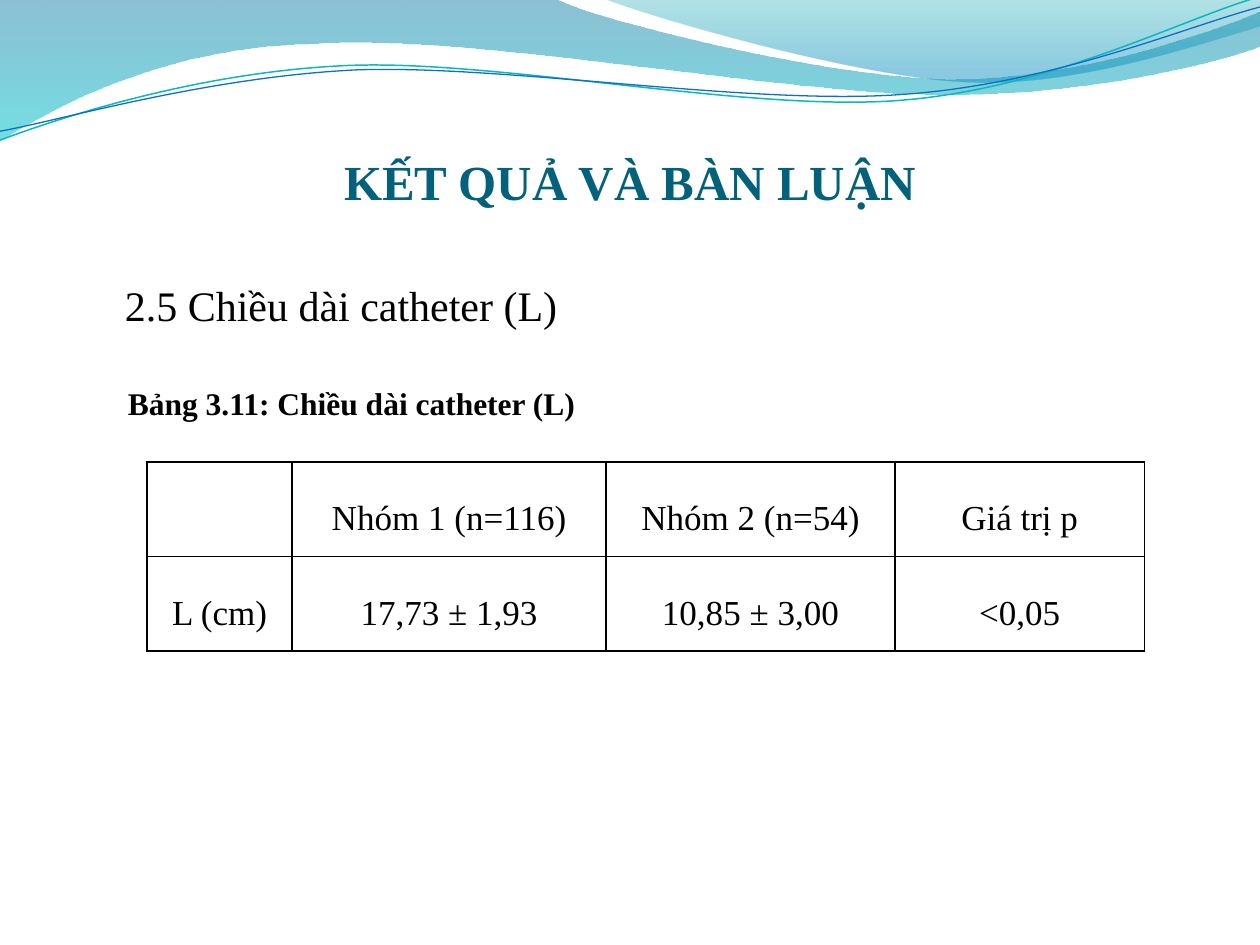
import pptx
import pptx.dml.color
import pptx.enum.text
import pptx.oxml.ns
import pptx.util
from lxml import etree

Pt = pptx.util.Pt
RGBColor = pptx.dml.color.RGBColor
Align = pptx.enum.text.PP_ALIGN
Anchor = pptx.enum.text.MSO_ANCHOR
AutoSize = pptx.enum.text.MSO_AUTO_SIZE
qn = pptx.oxml.ns.qn

FONT = "Times New Roman"
BLACK = RGBColor(0x00, 0x00, 0x00)
TITLE_BLUE = RGBColor(0x04, 0x61, 0x7B)
DEEP_BLUE = RGBColor(0x00, 0x74, 0xA1)
AQUA = RGBColor(0x00, 0xC6, 0xCF)
TEAL = RGBColor(0x00, 0xA1, 0xA9)
SKY = RGBColor(0x00, 0x8B, 0xBF)
LINE_TEAL = RGBColor(0x0A, 0xB8, 0xBF)
LINE_BLUE = RGBColor(0x0F, 0x6F, 0xC6)

STRAND_ROTATION = 357.3
WIDE_WAVE = [
    [(0, 0)],
    [(317, -1)],
    [(343, 12), (478, 45), (546, 45)],
    [(614, 45), (690, 19), (720, 6.5)],
    [(721, 26)],
    [(708, 32), (626, 55), (537, 54)],
    [(448, 54), (275, 20), (185, 24.5)],
    [(93, 26), (33, 60), (-1, 81)],
]
RIGHT_WAVE = [
    [(345, -1)],
    [(366, 8), (491, 45), (554, 47)],
    [(616, 50), (692, 23), (720, 15)],
    [(720, 0)],
]
TEAL_STRAND = [
    [(-1.4, 63.1)],
    [(34.2, 51.7), (114.3, 29.4), (199.4, 29.9)],
    [(284.4, 30.4), (425.8, 67.2), (512.1, 64.7)],
    [(599.3, 62.3), (676.1, 25.9), (720.1, 15.5)],
]
BLUE_STRAND = [
    [(-1.1, 58)],
    [(33.1, 53.6), (118.2, 32.6), (204.3, 32.6)],
    [(290.3, 33.7), (429.1, 63.8), (515.3, 61.3)],
    [(601.5, 59.4), (679, 30), (721.4, 21)],
]
COLUMN_WIDTHS = [83, 179.25, 165.25, 142.5]
ROW_HEIGHT = 54
TABLE_ROWS = [
    ["", "Nhóm 1 (n=116)", "Nhóm 2 (n=54)", "Giá trị p"],
    ["L (cm)", "17,73 ± 1,93", "10,85 ± 3,00", "<0,05"],
]


def write_text(frame, text, size, color=BLACK, bold=False, align=Align.LEFT,
               line_spacing=1.0, space_before=0):
    paragraph = frame.paragraphs[0]
    paragraph.alignment = align
    paragraph.line_spacing = line_spacing
    paragraph.space_before = Pt(space_before)
    run = paragraph.add_run()
    run.text = text
    run.font.name = FONT
    run.font.size = Pt(size)
    run.font.bold = bold
    run.font.color.rgb = color


def bend(shape, segments):
    lines = iter(list(shape.element.iter(qn("a:lnTo"))))
    for segment in segments[1:]:
        nodes = [next(lines) for _ in segment]
        if len(nodes) == 3:
            curve = etree.Element(qn("a:cubicBezTo"))
            nodes[0].addprevious(curve)
            for node in nodes:
                curve.append(node[0])
                node.getparent().remove(node)


class SlideBuilder:
    def __init__(self, slide):
        self.slide = slide

    def outline(self, segments, close):
        start, *others = [(Pt(x), Pt(y)) for segment in segments for x, y in segment]
        builder = self.slide.shapes.build_freeform(*start)
        builder.add_line_segments(others, close=close)
        shape = builder.convert_to_shape()
        bend(shape, segments)
        shape.shadow.inherit = False
        return shape

    def wave(self, segments, stops):
        shape = self.outline(segments, True)
        shape.line.fill.background()
        shape.fill.gradient()
        shape.fill.gradient_angle = 270
        for stop, (position, color, _) in zip(shape.fill.gradient_stops, stops):
            stop.position = position
            stop.color.rgb = color
        fill = shape.element.spPr.find(qn("a:gradFill"))
        for node, (_, _, opacity) in zip(fill.iter(qn("a:srgbClr")), stops):
            etree.SubElement(node, qn("a:alpha"), val=str(opacity * 1000))

    def strand(self, segments, color, width):
        shape = self.outline(segments, False)
        shape.rotation = STRAND_ROTATION
        shape.fill.background()
        shape.line.color.rgb = color
        shape.line.width = Pt(width)

    def title(self, text, left, top, width, height):
        shape = self.slide.shapes.title
        shape.left, shape.top = Pt(left), Pt(top)
        shape.width, shape.height = Pt(width), Pt(height)
        frame = shape.text_frame
        frame.auto_size = AutoSize.NONE
        frame.vertical_anchor = Anchor.BOTTOM
        frame.margin_left = frame.margin_right = frame.margin_bottom = 0
        frame.margin_top = Pt(3.6)
        write_text(frame, text, 28, color=TITLE_BLUE, bold=True, align=Align.CENTER)

    def label(self, text, left, top, width, height, **style):
        box = self.slide.shapes.add_textbox(Pt(left), Pt(top), Pt(width), Pt(height))
        box.text_frame.word_wrap = False
        box.text_frame.auto_size = AutoSize.SHAPE_TO_FIT_TEXT
        write_text(box.text_frame, text, **style)

    def border(self, cell):
        properties = cell._tc.get_or_add_tcPr()
        for index, side in enumerate(("lnL", "lnR", "lnT", "lnB")):
            line = etree.Element(qn(f"a:{side}"), w=str(Pt(1)))
            fill = etree.SubElement(line, qn("a:solidFill"))
            etree.SubElement(fill, qn("a:srgbClr"), val=str(BLACK))
            properties.insert(index, line)

    def table(self, rows, left, top):
        table = self.slide.shapes.add_table(
            len(rows), len(COLUMN_WIDTHS), Pt(left), Pt(top),
            Pt(sum(COLUMN_WIDTHS)), Pt(ROW_HEIGHT * len(rows))).table
        table.first_row = table.horz_banding = False
        for column, width in zip(table.columns, COLUMN_WIDTHS):
            column.width = Pt(width)
        for row, texts in zip(table.rows, rows):
            row.height = Pt(ROW_HEIGHT)
            for cell, text in zip(row.cells, texts):
                cell.fill.background()
                self.border(cell)
                cell.vertical_anchor = Anchor.MIDDLE
                cell.margin_left = cell.margin_right = Pt(5)
                cell.margin_top = cell.margin_bottom = 0
                if text:
                    write_text(cell.text_frame, text, 20, align=Align.CENTER,
                               line_spacing=1.5, space_before=3)


def main():
    presentation = pptx.Presentation()
    presentation.slide_width, presentation.slide_height = Pt(720), Pt(540)
    builder = SlideBuilder(presentation.slides.add_slide(presentation.slide_layouts[5]))
    builder.wave(WIDE_WAVE, [(0, DEEP_BLUE, 45), (1, AQUA, 55)])
    builder.wave(RIGHT_WAVE, [(0, TEAL, 30), (0.8, SKY, 45)])
    builder.strand(TEAL_STRAND, LINE_TEAL, 0.85)
    builder.strand(BLUE_STRAND, LINE_BLUE, 0.75)
    builder.title("KẾT QUẢ VÀ BÀN LUẬN", 36, 78, 648, 42)
    builder.label("Bảng 3.11: Chiều dài catheter (L)", 66, 216, 273, 29, size=18, bold=True)
    builder.label("2.5 Chiều dài catheter (L)", 64.25, 156, 263.5, 36, size=24)
    builder.table(TABLE_ROWS, 84, 264)
    presentation.save("out.pptx")


if __name__ == "__main__":
    main()
